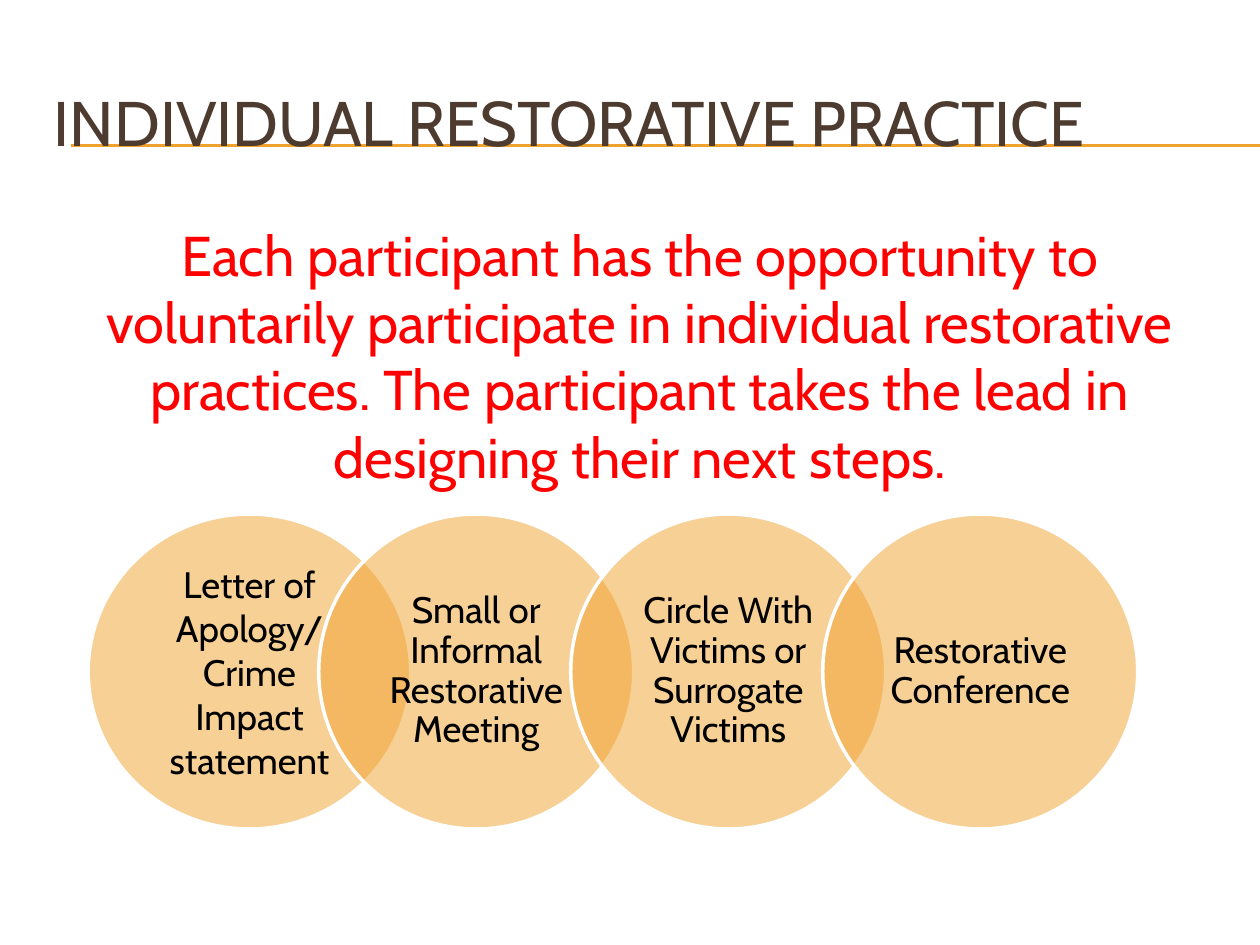
from lxml import etree
from pptx import Presentation
from pptx.dml.color import RGBColor
from pptx.enum import shapes, text
from pptx.oxml import ns
from pptx.util import Inches, Pt

ORANGE = RGBColor(0xF0, 0xA2, 0x2E)
BROWN = RGBColor(0x4E, 0x3B, 0x30)
RED = RGBColor(0xFF, 0x00, 0x00)
BLACK = RGBColor(0x00, 0x00, 0x00)
WHITE = RGBColor(0xFF, 0xFF, 0xFF)

TITLE = "INDIVIDUAL RESTORATIVE PRACTICE"
MESSAGE = (
    "Each participant has the opportunity to voluntarily participate in "
    "individual restorative practices. The participant takes the lead in "
    "designing their next steps."
)
FIRST_PRACTICE = "Letter of Apology/ Crime Impact statement"
OTHER_PRACTICES = [
    "Small or Informal Restorative Meeting",
    "Circle With Victims or Surrogate Victims",
    "Restorative Conference",
]
CIRCLE_TOP = 4.08
CIRCLE_SIZE = 2.5
CIRCLE_STEP = 2
LABEL_INSET = 0.37


def add_rule(parent, y):
    rule = parent.add_connector(
        shapes.MSO_CONNECTOR.STRAIGHT, Inches(0.56), Inches(y), Inches(10), Inches(y)
    )
    rule.line.color.rgb = ORANGE
    rule.line.width = Pt(0.75)
    etree.SubElement(rule._element.spPr, ns.qn("a:effectLst"))


def add_words(parent, box, words, size, color,
              align=text.PP_ALIGN.CENTER, anchor=text.MSO_ANCHOR.MIDDLE):
    words_box = parent.add_textbox(*map(Inches, box))
    frame = words_box.text_frame
    frame.word_wrap = True
    frame.vertical_anchor = anchor
    frame.text = words
    paragraph = frame.paragraphs[0]
    paragraph.alignment = align
    font = paragraph.runs[0].font
    font.name = "Cabin"
    font.size = Pt(size)
    font.color.rgb = color
    return frame


def add_practice(parent, left, width, label, line_spacing):
    circle = parent.add_shape(
        shapes.MSO_SHAPE.OVAL,
        *map(Inches, (left, CIRCLE_TOP, width, CIRCLE_SIZE)),
    )
    circle.shadow.inherit = False
    circle.fill.solid()
    circle.fill.fore_color.rgb = ORANGE
    tint = circle._element.spPr.find(".//" + ns.qn("a:srgbClr"))
    etree.SubElement(tint, ns.qn("a:alpha"), val="50000")
    circle.line.color.rgb = WHITE
    circle.line.width = Pt(2)

    label_box = (
        left + LABEL_INSET,
        CIRCLE_TOP + LABEL_INSET,
        width - 2 * LABEL_INSET,
        CIRCLE_SIZE - 2 * LABEL_INSET,
    )
    frame = add_words(parent, label_box, label, 21, BLACK)
    frame.margin_left = frame.margin_right = Inches(0.14)
    frame.margin_top = frame.margin_bottom = Inches(0.03)
    frame.paragraphs[0].line_spacing = line_spacing


def main():
    deck = Presentation()
    deck.slide_width = Inches(10)
    deck.slide_height = Inches(7.5)
    slide = deck.slides.add_slide(deck.slide_layouts[6])

    for y in (1.15, 1.16):
        add_rule(slide.shapes, y)
    add_words(slide.shapes, (0.33, 0.5, 9.5, 0.92), TITLE, 36, BROWN,
              align=text.PP_ALIGN.LEFT)
    add_words(slide.shapes, (0.33, 1.7, 9.5, 4.95), MESSAGE, 32, RED,
              anchor=text.MSO_ANCHOR.TOP)

    chain = slide.shapes.add_group_shape().shapes
    add_practice(chain, 0.7, 2.56, FIRST_PRACTICE, 1.0)
    for index, label in enumerate(OTHER_PRACTICES):
        add_practice(chain, 2.53 + index * CIRCLE_STEP, CIRCLE_SIZE, label, 0.9)

    deck.save("out.pptx")


if __name__ == "__main__":
    main()
